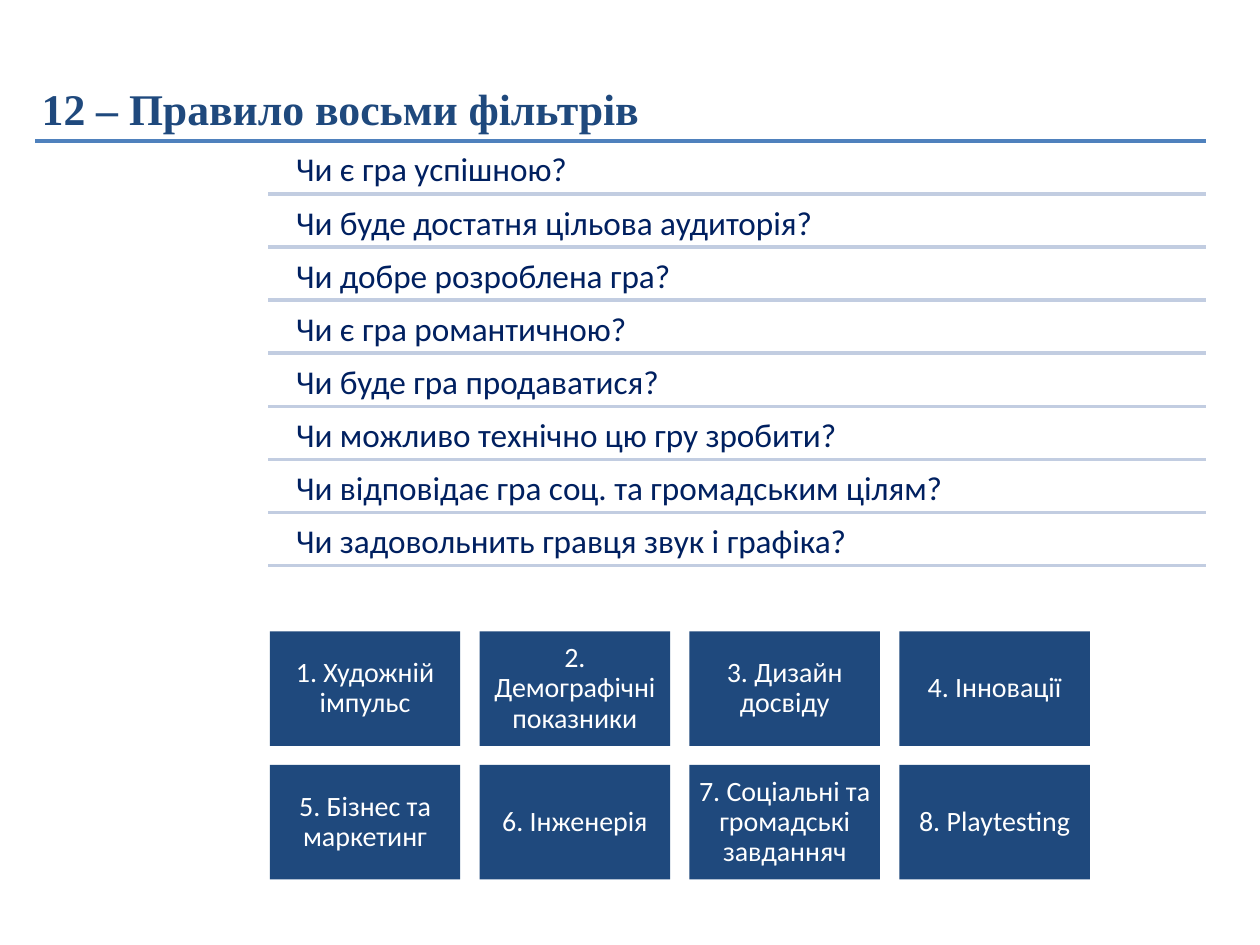
from dataclasses import dataclass

from lxml.etree import SubElement
from pptx import Presentation
from pptx.dml.color import RGBColor
from pptx.enum.shapes import MSO_CONNECTOR, MSO_SHAPE
from pptx.enum.text import MSO_ANCHOR, MSO_AUTO_SIZE, PP_ALIGN
from pptx.oxml.ns import qn
from pptx.util import Cm, Pt

COLORS = {
    "navy": "1F497D",
    "text": "002060",
    "accent": "4F81BD",
    "rule": "C2CDE1",
    "white": "FFFFFF",
}
RIGHT = 24.31
LIST_LEFT, LIST_TOP, ROW_PITCH = 5.41, 2.84, 1.07
GRID_LEFT, GRID_TOP, COLUMNS = 5.44, 12.73, 4
CARD_PITCH_X, CARD_PITCH_Y = 4.23, 2.69

QUESTIONS = [
    "Чи є гра успішною?",
    "Чи буде достатня цільова аудиторія?",
    "Чи добре розроблена гра?",
    "Чи є гра романтичною?",
    "Чи буде гра продаватися?",
    "Чи можливо технічно цю гру зробити?",
    "Чи відповідає гра соц. та громадським цілям?",
    "Чи задовольнить гравця звук і графіка?",
]
FILTERS = [
    "1. Художній імпульс",
    "2. Демографічні показники",
    "3. Дизайн досвіду",
    "4. Інновації",
    "5. Бізнес та маркетинг",
    "6. Інженерія",
    "7. Соціальні та громадські завданняч",
    "8. Playtesting",
]


@dataclass
class Style:
    size: float
    color: str
    font: str = "Calibri"
    bold: bool = False
    align: PP_ALIGN = PP_ALIGN.LEFT
    anchor: MSO_ANCHOR = MSO_ANCHOR.TOP
    spacing: float = 0.9
    inset: float = 0.2
    wrap: bool = True


@dataclass
class Box:
    text: str
    left: float
    top: float
    width: float
    height: float


TITLE = Style(25, "navy", "Times New Roman", True, PP_ALIGN.CENTER, spacing=1.0, inset=0.13, wrap=False)
QUESTION = Style(19, "text")
CARD = Style(16, "white", align=PP_ALIGN.CENTER, anchor=MSO_ANCHOR.MIDDLE, inset=0.17)


def rgb(name: str) -> RGBColor:
    return RGBColor.from_string(COLORS[name])


def write(sp, text: str, style: Style) -> None:
    tf = sp.text_frame
    tf.word_wrap = style.wrap
    tf.auto_size = MSO_AUTO_SIZE.NONE
    tf.vertical_anchor = style.anchor
    tf.margin_left = tf.margin_right = tf.margin_top = tf.margin_bottom = Cm(style.inset)
    p = tf.paragraphs[0]
    p.alignment = style.align
    p.line_spacing = style.spacing
    p.space_before = Pt(0)
    r = p.add_run()
    r.text = text
    r.font.name = style.font
    r.font.size = Pt(style.size)
    r.font.bold = style.bold
    r.font.color.rgb = rgb(style.color)


def add_title(s, box: Box) -> None:
    sp = s.shapes.title
    sp.left, sp.top = Cm(box.left), Cm(box.top)
    sp.width, sp.height = Cm(box.width), Cm(box.height)
    write(sp, box.text, TITLE)


def add_rule(s, left: float, y: float, color: str) -> None:
    line = s.shapes.add_connector(MSO_CONNECTOR.STRAIGHT, Cm(left), Cm(y), Cm(RIGHT), Cm(y))
    line.line.color.rgb = rgb(color)
    line.line.width = Pt(2)
    SubElement(line._element.spPr, qn("a:effectLst"))


def add_question(s, box: Box) -> None:
    sp = s.shapes.add_textbox(Cm(box.left), Cm(box.top), Cm(box.width), Cm(box.height))
    write(sp, box.text, QUESTION)


def add_card(s, box: Box) -> None:
    sp = s.shapes.add_shape(
        MSO_SHAPE.RECTANGLE, Cm(box.left), Cm(box.top), Cm(box.width), Cm(box.height)
    )
    sp.shadow.inherit = False
    sp.fill.solid()
    sp.fill.fore_color.rgb = rgb("navy")
    sp.line.fill.background()
    write(sp, box.text, CARD)


def main() -> None:
    """Build the slide on the rule of eight filters."""
    prs = Presentation()
    prs.slide_width, prs.slide_height = Cm(25.4), Cm(19.05)
    s = prs.slides.add_slide(prs.slide_layouts[5])

    add_title(s, Box("12 – Правило восьми фільтрів", 0.51, 1.52, 12.7, 1.32))
    add_rule(s, 0.71, LIST_TOP, "accent")
    for i, question in enumerate(QUESTIONS):
        top = LIST_TOP + i * ROW_PITCH
        add_question(s, Box(question, LIST_LEFT + 0.36, top + 0.05, 18.52, 1.02))
        add_rule(s, LIST_LEFT, top + ROW_PITCH, "rule")
    for i, name in enumerate(FILTERS):
        row, col = divmod(i, COLUMNS)
        left = GRID_LEFT + col * CARD_PITCH_X
        add_card(s, Box(name, left, GRID_TOP + row * CARD_PITCH_Y, 3.84, 2.31))

    prs.save("out.pptx")


if __name__ == "__main__":
    main()
